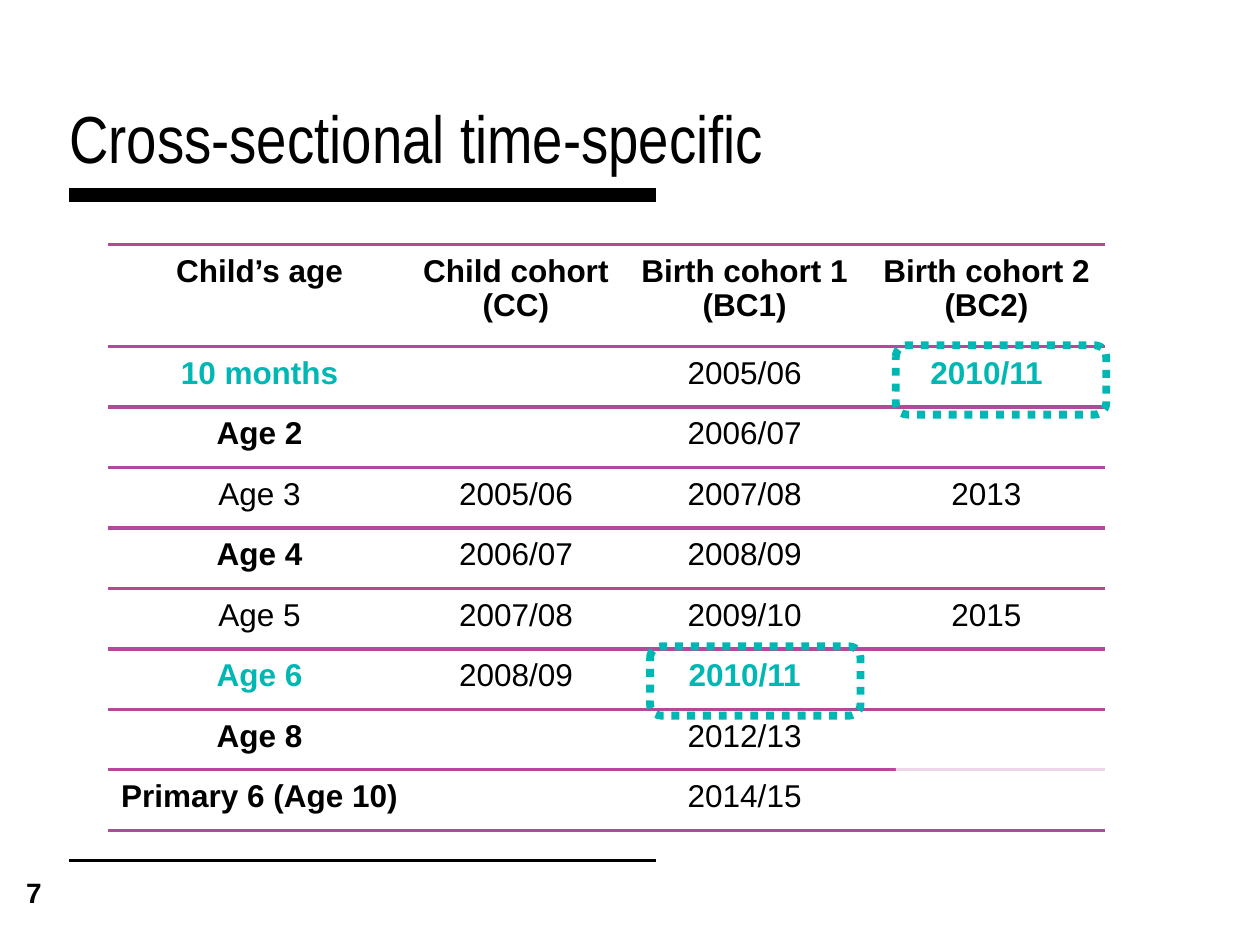
from lxml.etree import SubElement
from pptx import Presentation
from pptx.dml.color import RGBColor
from pptx.enum.dml import MSO_LINE
from pptx.enum.shapes import MSO_CONNECTOR, MSO_SHAPE
from pptx.enum.text import MSO_ANCHOR, MSO_AUTO_SIZE, PP_ALIGN
from pptx.oxml.ns import qn
from pptx.util import Inches, Pt

BLACK = RGBColor(0, 0, 0)
WHITE = RGBColor(255, 255, 255)
TEAL = RGBColor(0x00, 0xB7, 0xB4)
PURPLE = RGBColor(0xB4, 0x48, 0x9B)

TITLE = "Cross-sectional time-specific"
PAGE = "7"
ROWS = [
    ("Child’s age", "Child cohort (CC)", "Birth cohort 1 (BC1)", "Birth cohort 2 (BC2)"),
    ("10 months", "", "2005/06", "2010/11"),
    ("Age 2", "", "2006/07", ""),
    ("Age 3", "2005/06", "2007/08", "2013"),
    ("Age 4", "2006/07", "2008/09", ""),
    ("Age 5", "2007/08", "2009/10", "2015"),
    ("Age 6", "2008/09", "2010/11", ""),
    ("Age 8", "", "2012/13", ""),
    ("Primary 6 (Age 10)", "", "2014/15", ""),
]
KEY = {"10 months", "Age 6", "2010/11"}
PLAIN_AGES = {"Age 3", "Age 5"}
WIDTHS = [2.4, 1.67, 1.96, 1.88]
HEAD, ROW = 0.81, 0.48
RULES = [(1.55, 8), (6.83, 2)]  # top, weight
RINGS = [(5.16, 5.13), (7.11, 2.74)]  # left, top


def style(para, size, color=BLACK, bold=False, name="Arial"):
    for run in para.runs:
        font = run.font
        font.name, font.size, font.bold = name, Pt(size), bold
        font.color.rgb = color


def clear_insets(frame):
    frame.margin_left = frame.margin_right = 0
    frame.margin_top = frame.margin_bottom = 0


def add_rule(slide, top, weight):
    rule = slide.shapes.add_connector(
        MSO_CONNECTOR.STRAIGHT, Inches(0.55), Inches(top), Inches(5.21), Inches(top))
    rule.line.color.rgb = BLACK
    rule.line.width = Pt(weight)
    SubElement(rule._element.spPr, qn("a:effectLst"))


def set_borders(cell):
    """Draw purple lines above and below the cell, none at its sides."""
    props = cell._tc.get_or_add_tcPr()
    for side in ("lnL", "lnR"):
        SubElement(SubElement(props, qn("a:" + side), w="0"), qn("a:noFill"))
    for side in ("lnT", "lnB"):
        line = SubElement(props, qn("a:" + side), w=str(Pt(2.25)))
        fill = SubElement(line, qn("a:solidFill"))
        SubElement(fill, qn("a:srgbClr"), val=str(PURPLE))


def fill_cell(cell, text, bold):
    cell.margin_left = cell.margin_right = Inches(0.07)
    cell.margin_top = cell.margin_bottom = Inches(0.08)
    set_borders(cell)
    cell.fill.background()
    if text:
        cell.text_frame.text = text
        para = cell.text_frame.paragraphs[0]
        para.alignment = PP_ALIGN.CENTER
        para.line_spacing, para.space_after = 0.98, Pt(9)
        style(para, 18, TEAL if text in KEY else BLACK, bold)


def add_grid(slide):
    heights = [HEAD] + [ROW] * (len(ROWS) - 1)
    table = slide.shapes.add_table(
        len(ROWS), len(WIDTHS), Inches(0.86), Inches(1.94),
        Inches(sum(WIDTHS)), Inches(sum(heights))).table
    table.first_row = table.horz_banding = False
    for col, width in zip(table.columns, WIDTHS):
        col.width = Inches(width)
    for r, texts in enumerate(ROWS):
        table.rows[r].height = Inches(heights[r])
        for c, text in enumerate(texts):
            bold = r == 0 or text in KEY or (c == 0 and text not in PLAIN_AGES)
            fill_cell(table.cell(r, c), text, bold)


def add_veil(slide):
    """Fade the table line below it with translucent white."""
    veil = slide.shapes.add_shape(
        MSO_SHAPE.RECTANGLE, Inches(7.11), Inches(5.75), Inches(1.75), Inches(0.5))
    veil.shadow.inherit = False
    veil.line.fill.background()
    veil.fill.solid()
    veil.fill.fore_color.rgb = WHITE
    color = veil._element.spPr.find(".//" + qn("a:srgbClr"))
    SubElement(color, qn("a:alpha"), val="78000")


def add_ring(slide, left, top):
    ring = slide.shapes.add_shape(
        MSO_SHAPE.ROUNDED_RECTANGLE, Inches(left), Inches(top), Inches(1.67), Inches(0.55))
    ring.shadow.inherit = False
    ring.fill.background()
    ring.line.color.rgb = TEAL
    ring.line.width = Pt(4.5)
    ring.line.dash_style = MSO_LINE.ROUND_DOT  # written as sysDot


def main():
    deck = Presentation()
    deck.slide_width, deck.slide_height = Inches(10), Inches(7.5)
    slide = deck.slides.add_slide(deck.slide_layouts[5])

    for top, weight in RULES:
        add_rule(slide, top, weight)

    title = slide.shapes.title
    title.left, title.top = Inches(0.55), Inches(0.5)
    title.width, title.height = Inches(7.04), Inches(0.9)
    frame = title.text_frame
    frame.text = TITLE
    clear_insets(frame)
    frame.auto_size = MSO_AUTO_SIZE.NONE
    frame.vertical_anchor = MSO_ANCHOR.BOTTOM
    frame.paragraphs[0].alignment = PP_ALIGN.LEFT
    style(frame.paragraphs[0], 38, name="Arial Narrow")

    page = slide.shapes.add_textbox(Inches(0.04), Inches(6.95), Inches(0.46), Inches(0.27))
    frame = page.text_frame
    frame.text = PAGE
    frame.word_wrap = True
    clear_insets(frame)
    frame.paragraphs[0].alignment = PP_ALIGN.CENTER
    style(frame.paragraphs[0], 16, bold=True)

    add_grid(slide)
    add_veil(slide)
    for left, top in RINGS:
        add_ring(slide, left, top)
    deck.save("out.pptx")


if __name__ == "__main__":
    main()
